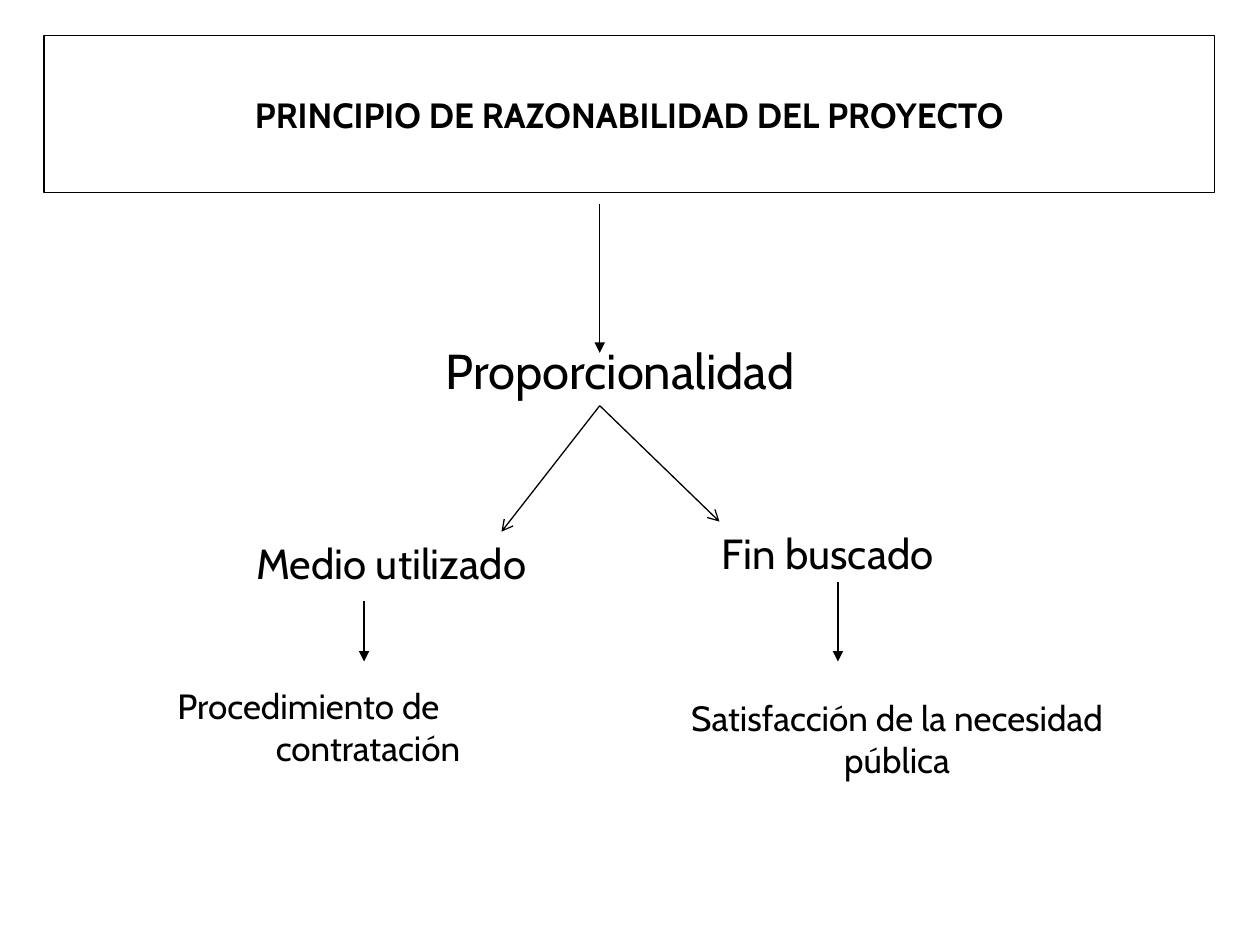
from dataclasses import dataclass

from lxml import etree
from pptx import Presentation
from pptx.dml.color import RGBColor
from pptx.enum import shapes, text
from pptx.oxml import ns
from pptx.util import Inches, Pt


@dataclass(frozen=True)
class Theme:
    font: str = "Cabin"
    ink: RGBColor = RGBColor(0, 0, 0)
    line: float = 0.75
    concept: int = 28
    branch: int = 24
    body: int = 20


theme = Theme()
CENTER, LEFT = text.PP_ALIGN.CENTER, text.PP_ALIGN.LEFT


def write(box, words, size=theme.body, bold=False, align=CENTER,
          anchor=text.MSO_ANCHOR.TOP, margin=0, first=0):
    """Fill a box with one paragraph; margin and first set a hanging indent."""
    frame = box.text_frame
    frame.word_wrap = True
    frame.vertical_anchor = anchor
    para = frame.paragraphs[0]
    para.alignment = align
    if margin:
        props = para._p.get_or_add_pPr()
        props.set("marL", str(Inches(margin)))
        props.set("indent", str(Inches(first)))
    span = para.add_run()
    span.text = words
    span.font.name = theme.font
    span.font.size = Pt(size)
    span.font.bold = bold
    span.font.color.rgb = theme.ink


deck = Presentation()
deck.slide_width, deck.slide_height = Inches(10), Inches(7.5)
page = deck.slides.add_slide(deck.slide_layouts[6])

# Title frame
title = page.shapes.add_shape(shapes.MSO_SHAPE.RECTANGLE, Inches(0.35),
                              Inches(0.28), Inches(9.29), Inches(1.25))
title.shadow.inherit = False
title.fill.background()
title.line.color.rgb = theme.ink
title.line.width = Pt(theme.line)
write(title, "PRINCIPIO DE RAZONABILIDAD DEL PROYECTO", bold=True,
      anchor=text.MSO_ANCHOR.MIDDLE)

# Concept, its two branches and their outcomes
labels = [
    ("Proporcionalidad", (1.17, 2.65, 7.5, 0.57), dict(size=theme.concept)),
    ("Medio utilizado", (1.69, 4.22, 2.83, 0.5), dict(size=theme.branch)),
    ("Fin buscado", (5.63, 4.14, 3.39, 0.5),
     dict(size=theme.branch, align=LEFT)),
    ("Procedimiento de contratación", (1.22, 5.38, 3.15, 0.77),
     dict(align=LEFT, margin=0.87, first=-0.78)),
    ("Satisfacción de la necesidad pública", (5.31, 5.48, 3.62, 0.77), {}),
]
for words, place, style in labels:
    box = page.shapes.add_textbox(*map(Inches, place))
    write(box, words, **style)

# Arrows: down the stem, out to the branches, down to the outcomes
stem, left, right = 4.76, 2.89, 6.65
arrows = [
    ((stem, 1.62), (stem, 2.8), "triangle"),
    ((stem, 3.22), (3.98, 4.22), "arrow"),
    ((stem, 3.22), (5.71, 4.14), "arrow"),
    ((left, 4.77), (left, 5.25), "triangle"),
    ((right, 4.62), (right, 5.25), "triangle"),
]
for start, end, head in arrows:
    arrow = page.shapes.add_connector(shapes.MSO_CONNECTOR.STRAIGHT,
                                      *map(Inches, start + end))
    arrow.line.color.rgb = theme.ink
    arrow.line.width = Pt(theme.line)
    etree.SubElement(arrow.line._get_or_add_ln(), ns.qn("a:tailEnd"), type=head)
    etree.SubElement(arrow._element.spPr, ns.qn("a:effectLst"))

deck.save("out.pptx")
